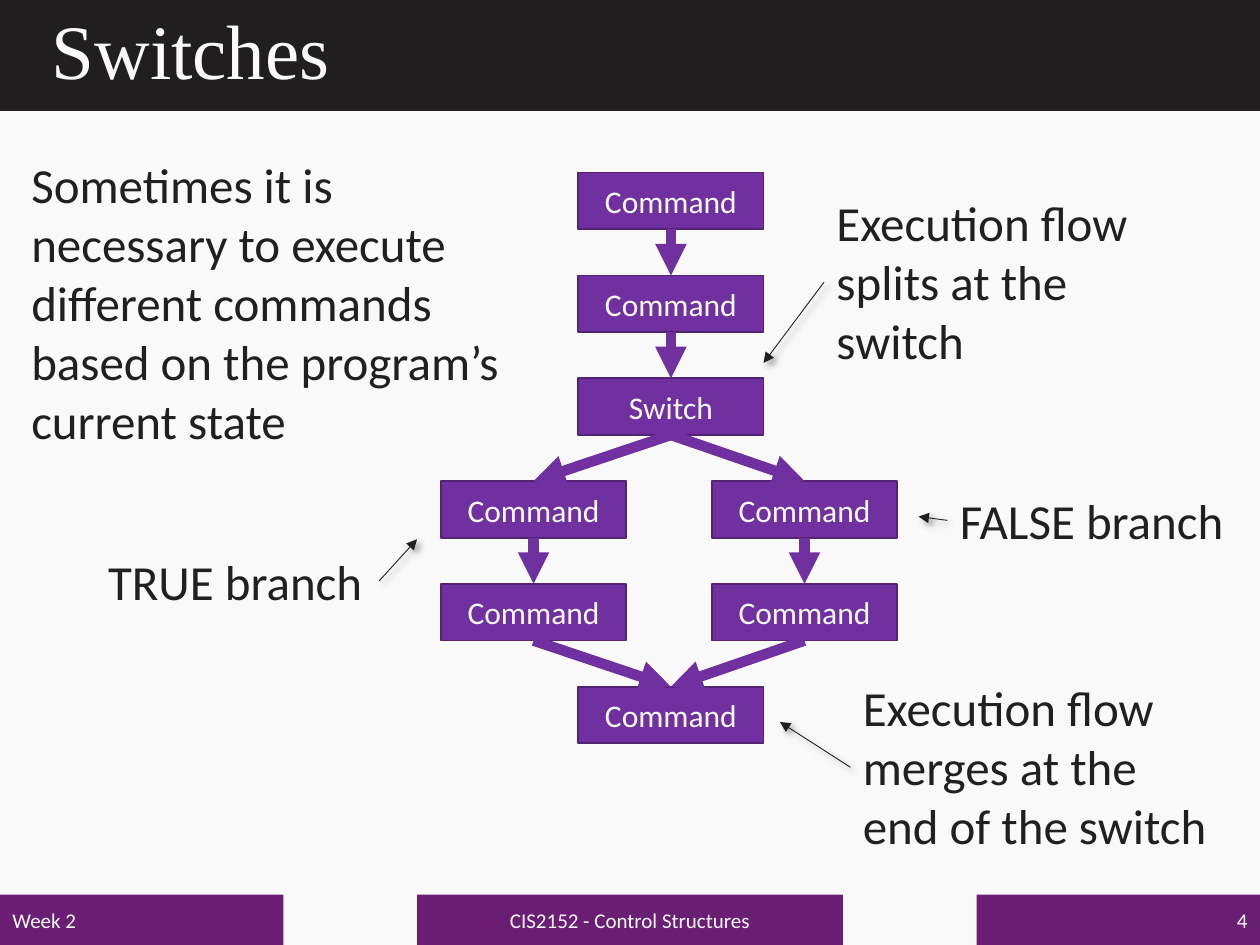
from dataclasses import dataclass

from lxml.etree import SubElement
from pptx import Presentation
from pptx.dml.color import RGBColor
from pptx.enum.shapes import MSO_CONNECTOR, MSO_SHAPE
from pptx.enum.text import MSO_ANCHOR, MSO_AUTO_SIZE, PP_ALIGN
from pptx.oxml.ns import qn
from pptx.util import Inches, Pt

COLS, ROWS = 10, 7.5  # slide grid, one inch per unit


@dataclass(frozen=True)
class Theme:
    paper: str = "F9F9F9"
    header: str = "221E1F"
    footer: str = "6A1F74"
    box: str = "7030A0"
    box_edge: str = "532476"
    ink: str = "202020"
    title_font: str = "Times New Roman"
    body_font: str = "Calibri"
    title_size: int = 44
    note_size: int = 28
    box_size: int = 18
    footer_size: int = 12


def rgb(value):
    return RGBColor.from_string(value)


@dataclass
class Deck:
    prs: object
    s: object
    theme: Theme

    def place(self, col, row, *size):
        """Turn grid columns and rows into slide lengths."""
        x, y = self.prs.slide_width / COLS, self.prs.slide_height / ROWS
        return [round(v * u) for v, u in zip((col, row, *size), (x, y, x, y))]

    def set_text(self, tf, text, size, color, align=PP_ALIGN.LEFT, font=None):
        tf.text = text
        p = tf.paragraphs[0]
        p.alignment = align
        r = p.runs[0]
        r.font.name = font or self.theme.body_font
        r.font.size = Pt(size)
        r.font.color.rgb = rgb(color)
        return p

    def title(self, text, *at):
        sp = self.s.shapes.title
        sp.left, sp.top, sp.width, sp.height = self.place(*at)
        tf = sp.text_frame
        tf.vertical_anchor = MSO_ANCHOR.MIDDLE
        p = self.set_text(tf, text, self.theme.title_size, self.theme.paper,
                          font=self.theme.title_font)
        p.line_spacing = 0.9

    def rect(self, at, fill, text="", size=None, edge=None,
             align=PP_ALIGN.CENTER):
        sp = self.s.shapes.add_shape(MSO_SHAPE.RECTANGLE, *self.place(*at))
        sp.shadow.inherit = False
        sp.fill.solid()
        sp.fill.fore_color.rgb = rgb(fill)
        if edge:
            sp.line.color.rgb = rgb(edge)
            sp.line.width = Pt(1)
        else:
            sp.line.fill.background()
        if text:
            tf = sp.text_frame
            tf.vertical_anchor = MSO_ANCHOR.MIDDLE
            self.set_text(tf, text, size, self.theme.paper, align)
        return sp

    def header(self, height):
        bar = self.rect((0, 0, COLS, height), self.theme.header)
        self.s.shapes.title._element.addprevious(bar._element)

    def footer(self, col, width, text, align):
        self.rect((col, 7.1, width, 0.4), self.theme.footer, text,
                  self.theme.footer_size, align=align)

    def step(self, col, row, text):
        return self.rect((col, row, 1.47, 0.45), self.theme.box, text,
                         self.theme.box_size, self.theme.box_edge)

    def note(self, text, *at, wrap=True):
        tf = self.s.shapes.add_textbox(*self.place(*at)).text_frame
        tf.word_wrap = wrap
        tf.auto_size = MSO_AUTO_SIZE.SHAPE_TO_FIT_TEXT
        self.set_text(tf, text, self.theme.note_size, self.theme.ink)

    def arrow(self, start, end, color, width):
        c = self.s.shapes.add_connector(
            MSO_CONNECTOR.STRAIGHT, *self.place(*start), *self.place(*end))
        c.line.color.rgb = rgb(color)
        c.line.width = Pt(width)
        SubElement(c.line._ln, qn("a:tailEnd"), type="triangle")
        return c, SubElement(c._element.spPr, qn("a:effectLst"))

    def flow(self, upper, lower):
        """Join the bottom of one step to the top of the next."""
        c, _ = self.arrow((0, 0), (1, 1), self.theme.box, 6)
        c.begin_connect(upper, 2)
        c.end_connect(lower, 0)

    def pointer(self, start, end):
        """Draw a thin arrow with a soft shadow from a note to the chart."""
        _, effects = self.arrow(start, end, self.theme.ink, 0.5)
        shadow = SubElement(effects, qn("a:outerShdw"), blurRad=str(Pt(4)),
                            dist=str(Pt(3)), dir=str(45 * 60000),
                            algn="tl", rotWithShape="0")
        color = SubElement(shadow, qn("a:srgbClr"), val="000000")
        SubElement(color, qn("a:alpha"), val="40000")


def main():
    prs = Presentation()
    prs.slide_width, prs.slide_height = Inches(10), Inches(7.5)
    s = prs.slides.add_slide(prs.slide_layouts[5])
    deck = Deck(prs, s, Theme())
    s.background.fill.solid()
    s.background.fill.fore_color.rgb = rgb(deck.theme.paper)

    # Header and footer
    deck.title("Switches", 0.31, 0, 9.39, 0.86)
    deck.header(0.88)
    deck.footer(0, 2.25, "Week 2", PP_ALIGN.LEFT)
    deck.footer(3.31, 3.38, "CIS2152 - Control Structures", PP_ALIGN.CENTER)
    deck.footer(7.75, 2.25, "4", PP_ALIGN.RIGHT)

    # Flowchart steps: name, column, level and label
    columns = {"left": 3.5, "middle": 4.59, "right": 5.65}
    top, pitch = 1.37, (5.45 - 1.37) / 5
    layout = [
        ("first", "middle", 0, "Command"),
        ("second", "middle", 1, "Command"),
        ("switch", "middle", 2, "Switch"),
        ("true 1", "left", 3, "Command"),
        ("false 1", "right", 3, "Command"),
        ("true 2", "left", 4, "Command"),
        ("false 2", "right", 4, "Command"),
        ("merge", "middle", 5, "Command"),
    ]
    steps = {name: deck.step(columns[column], top + level * pitch, text)
             for name, column, level, text in layout}

    # Execution flow along both branches
    deck.flow(steps["first"], steps["second"])
    deck.flow(steps["second"], steps["switch"])
    for branch in ("false", "true"):
        route = ["switch", f"{branch} 1", f"{branch} 2", "merge"]
        for upper, lower in zip(route, route[1:]):
            deck.flow(steps[upper], steps[lower])

    # Notes
    deck.note("Sometimes it is necessary to execute different commands "
              "based on the program’s current state", 0.15, 1.18, 4.21, 2.46)
    deck.note("Execution flow splits at the switch", 6.54, 1.48, 2.88, 1.51)
    deck.note("Execution flow merges at the end of the switch",
              6.75, 5.33, 2.94, 1.51)
    deck.note("TRUE branch", 0.76, 4.33, 2.24, 0.57, wrap=False)
    deck.note("FALSE branch", 7.52, 3.84, 2.32, 0.57, wrap=False)

    # Pointers from the notes
    for start, end in [
        ((6.54, 2.24), (6.06, 2.88)),
        ((6.75, 6.09), (6.19, 5.73)),
        ((7.52, 4.13), (7.29, 4.1)),
        ((3.01, 4.61), (3.31, 4.28)),
    ]:
        deck.pointer(start, end)

    prs.save("out.pptx")


if __name__ == "__main__":
    main()
